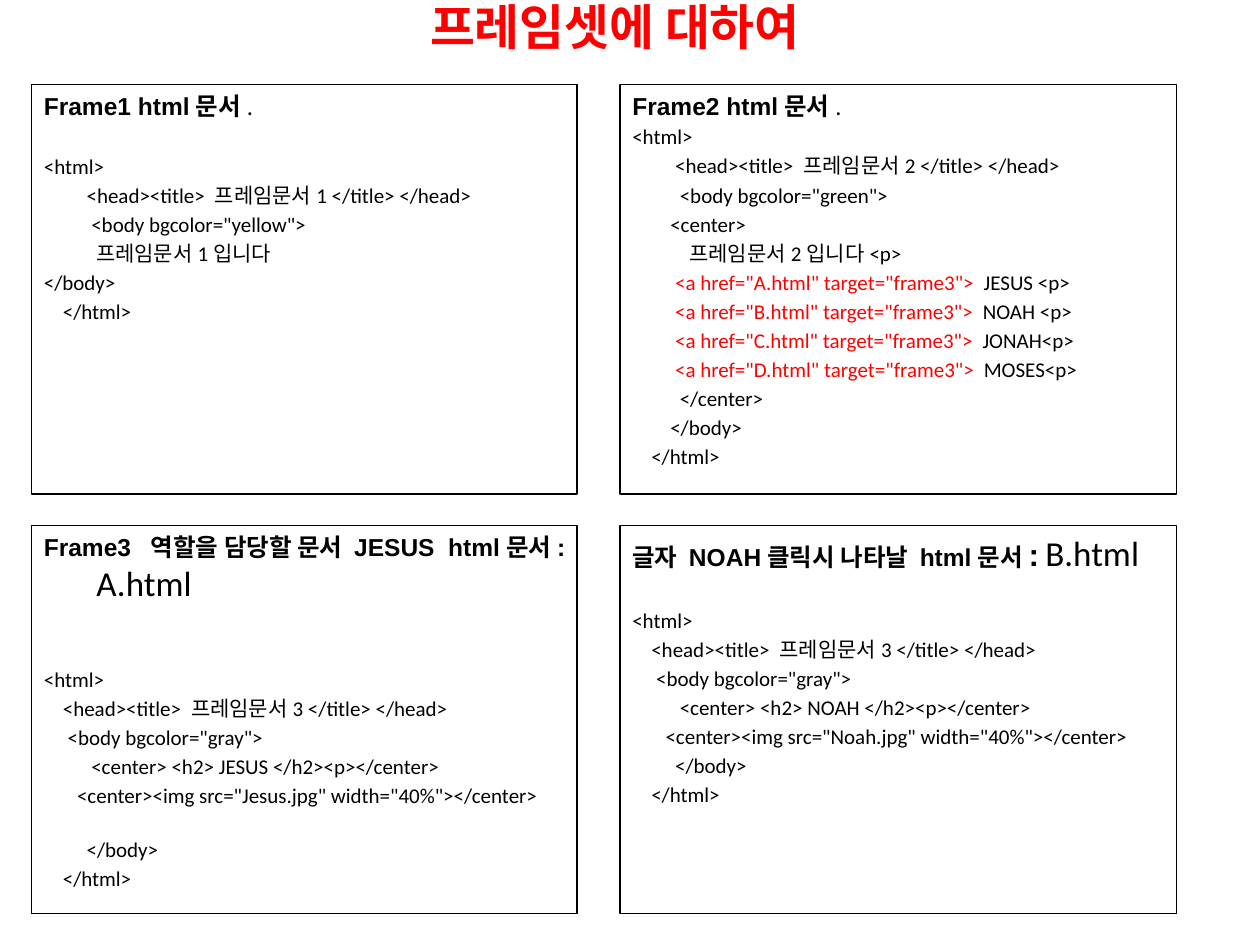
from pptx import Presentation
from pptx.dml.color import RGBColor
from pptx.enum import shapes, text
from pptx.util import Inches, Pt

BLACK, RED = "000000", "FF0000"
SPACE = 0.0377
HANG = 0.38
LINE = 16.9


def color(code):
    return RGBColor.from_string(code)


def add_run(para, words, size, face="Calibri", bold=False, hue=BLACK):
    run = para.add_run()
    run.text = words
    run.font.size = Pt(size)
    run.font.name = face
    run.font.bold = bold
    run.font.color.rgb = color(hue)


deck = Presentation()
deck.slide_width, deck.slide_height = Inches(10), Inches(7.5)
slide = deck.slides.add_slide(deck.slide_layouts[6])

title = slide.shapes.add_textbox(Inches(3.17), Inches(0), Inches(3.42), Inches(0.5))
frame = title.text_frame
frame.word_wrap = True
frame.vertical_anchor = text.MSO_ANCHOR.MIDDLE
para = frame.paragraphs[0]
para.alignment = text.PP_ALIGN.CENTER
para.line_spacing = 0.8
add_run(para, "프레임셋에 대하여", 27.9, bold=True, hue=RED)

links = []
for page, name in zip("ABCD", ["JESUS <p>", "NOAH <p>", "JONAH<p>", "MOSES<p>"]):
    links.append((9, 0, [(f'<a href="{page}.html" target="frame3">  ', RED), (name, BLACK)]))

first = [
    (0, 1, [("<html>", BLACK)]),
    (9, 0, [("<head><title> 프레임문서1 </title> </head>", BLACK)]),
    (10, 0, [('<body bgcolor="yellow">', BLACK)]),
    (11, 0, [("프레임문서1입니다", BLACK)]),
    (0, 0, [("</body>", BLACK)]),
    (4, 0, [("</html>", BLACK)]),
]
second = [
    (0, 0, [("<html>", BLACK)]),
    (9, 0, [("<head><title> 프레임문서2 </title> </head>", BLACK)]),
    (10, 0, [('<body bgcolor="green">', BLACK)]),
    (8, 0, [("<center>", BLACK)]),
    (12, 0, [("프레임문서2입니다<p>", BLACK)]),
    *links,
    (10, 0, [("</center>", BLACK)]),
    (8, 0, [("</body>", BLACK)]),
    (4, 0, [("</html>", BLACK)]),
]
pages = []
for name, top, tail in [("Jesus", 2, 0.85), ("Noah", 1, 0)]:
    pages.append([
        (0, top, [("<html>", BLACK)]),
        (4, 0, [("<head><title> 프레임문서3 </title> </head>", BLACK)]),
        (5, 0, [('<body bgcolor="gray">', BLACK)]),
        (10, 0, [(f"<center> <h2> {name.upper()} </h2><p></center>", BLACK)]),
        (7, 0, [(f'<center><img src="{name}.jpg" width="40%"></center>', BLACK)]),
        (9, tail, [("</body>", BLACK)]),
        (4, 0, [("</html>", BLACK)]),
    ])

heads = [
    [("Frame1 html문서", 14, "Arial", True), (".", 14)],
    [("Frame2 html문서", 14, "Arial", True), (".", 14)],
    [("Frame3  역할을 담당할 문서 JESUS  html문서:", 14, "Arial", True),
     (" ", 12), ("A.html", 20)],
    [("글자 NOAH클릭시 나타날 html문서", 14, "Arial", True),
     (":", 18, "Arial", True), (" ", 16), ("B.html", 20)],
]
cols = [(0.25, 4.33), (4.92, 4.42)]
rows = [(0.67, 3.25), (4.17, 3.08)]

for i, (head, body) in enumerate(zip(heads, [first, second, *pages])):
    left, width = cols[i % 2]
    top, height = rows[i // 2]
    box = slide.shapes.add_shape(
        shapes.MSO_SHAPE.RECTANGLE, Inches(left), Inches(top), Inches(width), Inches(height))
    box.shadow.inherit = False
    box.fill.background()
    box.line.color.rgb = color(BLACK)
    box.line.width = Pt(0.75)
    frame = box.text_frame
    frame.word_wrap = True
    frame.vertical_anchor = text.MSO_ANCHOR.TOP
    para = frame.paragraphs[0]
    for part in head:
        add_run(para, *part)
    for depth, gap, parts in body:
        para = frame.add_paragraph()
        para.space_before = Pt(round(2.2 + gap * LINE, 1))
        for words, hue in parts:
            add_run(para, words, 12, hue=hue)
    for para, depth in zip(frame.paragraphs, [0] + [line[0] for line in body]):
        para.alignment = text.PP_ALIGN.LEFT
        props = para._p.get_or_add_pPr()
        props.set("marL", str(Inches(HANG)))
        props.set("indent", str(Inches(depth * SPACE - HANG)))

deck.save("out.pptx")
